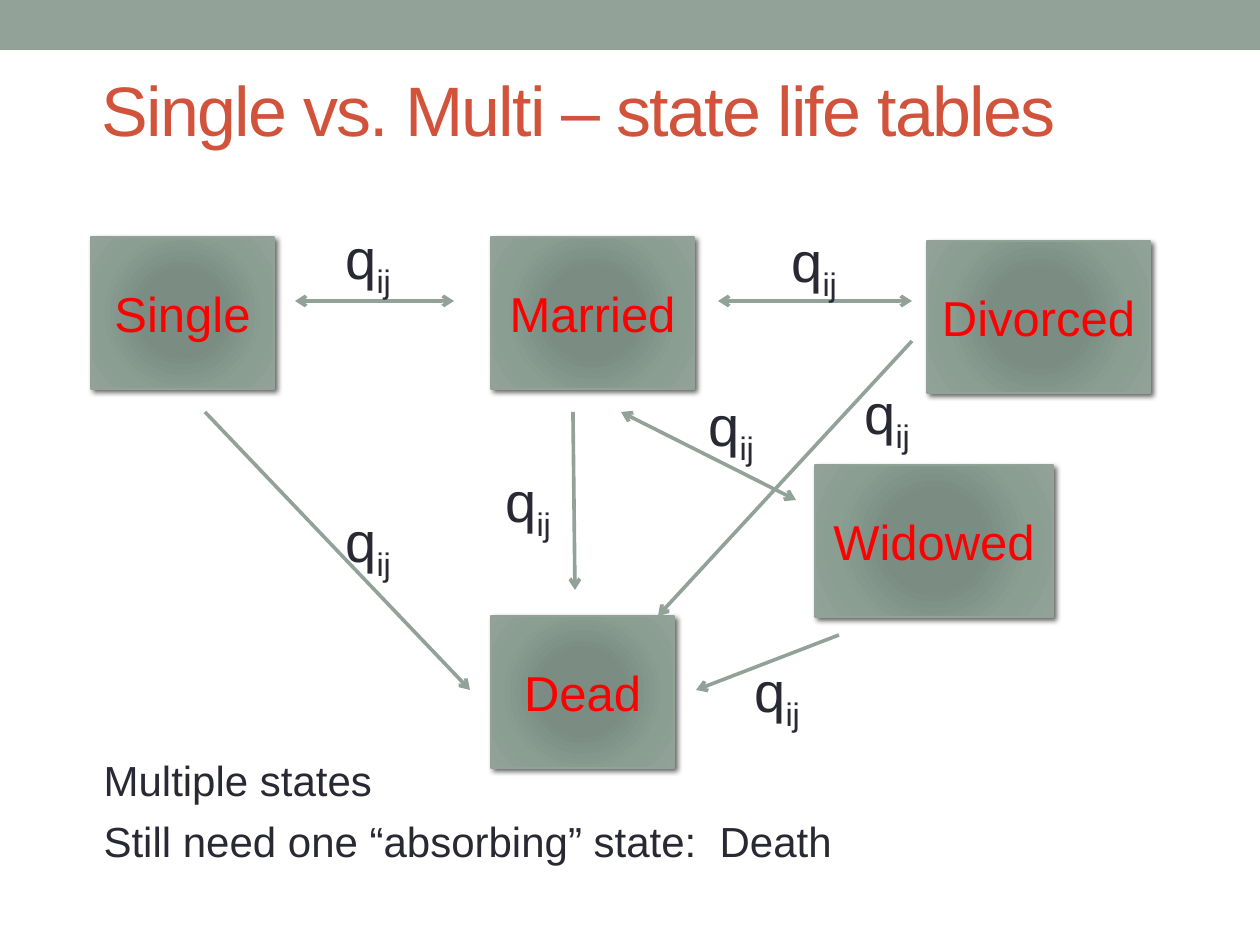
import dataclasses

import lxml.etree
import pptx
import pptx.dml.color
import pptx.enum.shapes
import pptx.enum.text
import pptx.oxml.ns
import pptx.util

PX_PER_INCH = 126
qn = pptx.oxml.ns.qn
ANCHOR = pptx.enum.text.MSO_ANCHOR
ALIGN = pptx.enum.text.PP_ALIGN
RECTANGLE = pptx.enum.shapes.MSO_SHAPE.RECTANGLE


@dataclasses.dataclass(frozen=True)
class Theme:
    font: str = "Arial"
    sage: str = "93A299"
    title: str = "D2533C"
    text: str = "292934"
    state: str = "FF0000"
    shadow: str = "000000"
    gradient: tuple = ((0, "7B8E82"), (34, "7B8D83"), (70, "8A9E92"), (100, "93A299"))
    title_size: int = 40
    rate_size: int = 32
    state_size: int = 28
    body_size: int = 24
    body_gap: int = 6
    box_line: float = 0.75
    arrow_line: float = 2.08


THEME = Theme()

# Boxes: name, left, top, width, height
STATES = [
    ("Single", 91, 237, 183, 152),
    ("Widowed", 815, 465, 238, 152),
    ("Dead", 491, 616, 183, 152),
    ("Divorced", 927, 241, 223, 152),
    ("Married", 491, 237, 203, 152),
]
# Transitions: start x, y, end x, y, goes both ways
TRANSITIONS = [
    (295, 301, 454, 301, True),
    (718, 301, 912, 301, True),
    (621, 412, 796, 500, True),
    (205, 412, 470, 690, False),
    (573, 412, 575, 590, False),
    (839, 635, 696, 690, False),
    (912, 341, 658, 616, False),
]
RATE_LABELS = [(333, 217), (493, 460), (333, 500), (696, 384),
               (779, 220), (852, 372), (742, 650)]


def px(n):
    return pptx.util.Emu(round(n * pptx.util.Inches(1) / PX_PER_INCH))


def rgb(color):
    return pptx.dml.color.RGBColor.from_string(color)


def add_xml(parent, tag, **attrs):
    return lxml.etree.SubElement(parent, qn(tag), {k: str(v) for k, v in attrs.items()})


def format_run(r, size, color):
    r.font.name = THEME.font
    r.font.size = pptx.util.Pt(size)
    r.font.color.rgb = rgb(color)


def place(s, left, top, width, height):
    s.left, s.top, s.width, s.height = map(px, (left, top, width, height))


def add_band(slide):
    s = slide.shapes.add_shape(RECTANGLE, 0, 0, px(1260), px(50))
    s.shadow.inherit = False
    s.fill.solid()
    s.fill.fore_color.rgb = rgb(THEME.sage)
    s.line.fill.background()


def set_title(slide, text):
    s = slide.shapes.title
    place(s, 89, 60, 1115, 97)
    tf = s.text_frame
    tf.text = text
    tf.vertical_anchor = ANCHOR.BOTTOM
    p = tf.paragraphs[0]
    p.alignment = ALIGN.LEFT
    r = p.runs[0]
    format_run(r, THEME.title_size, THEME.title)
    r.font._element.set("spc", "-100")


def set_body(slide, lines):
    s = slide.placeholders[1]
    place(s, 91, 748, 1147, 120)
    tf = s.text_frame
    tf.text = "\n".join(lines)
    tf.vertical_anchor = ANCHOR.TOP
    for i, p in enumerate(tf.paragraphs):
        p.space_before = pptx.util.Pt(THEME.body_gap if i else 0)
        props = p._p.get_or_add_pPr()
        props.set("marL", "0")
        props.set("indent", "0")
        add_xml(props, "a:buNone")
        format_run(p.runs[0], THEME.body_size, THEME.text)


def fill_radial(s):
    s.fill.gradient()
    grad = s._element.spPr.find(qn("a:gradFill"))
    for child in list(grad):
        grad.remove(child)
    stops = add_xml(grad, "a:gsLst")
    for position, color in THEME.gradient:
        stop = add_xml(stops, "a:gs", pos=position * 1000)
        add_xml(stop, "a:srgbClr", val=color)
    circle = add_xml(grad, "a:path", path="circle")
    add_xml(circle, "a:fillToRect", l=100000, t=100000, r=100000, b=100000)


def add_drop_shadow(s):
    s.shadow.inherit = False
    effects = s._element.spPr.find(qn("a:effectLst"))
    shadow = add_xml(effects, "a:outerShdw", blurRad=pptx.util.Pt(3),
                     dist=pptx.util.Pt(2), dir=45 * 60000, rotWithShape=0)
    color = add_xml(shadow, "a:srgbClr", val=THEME.shadow)
    add_xml(color, "a:alpha", val=60000)


def add_state(slide, name, left, top, width, height):
    s = slide.shapes.add_shape(RECTANGLE, *map(px, (left, top, width, height)))
    fill_radial(s)
    s.line.color.rgb = rgb(THEME.sage)
    s.line.width = pptx.util.Pt(THEME.box_line)
    add_drop_shadow(s)
    tf = s.text_frame
    tf.text = name
    tf.vertical_anchor = ANCHOR.MIDDLE
    p = tf.paragraphs[0]
    p.alignment = ALIGN.CENTER
    format_run(p.runs[0], THEME.state_size, THEME.state)


def add_transition(slide, x1, y1, x2, y2, both_ways):
    straight = pptx.enum.shapes.MSO_CONNECTOR.STRAIGHT
    s = slide.shapes.add_connector(straight, *map(px, (x1, y1, x2, y2)))
    s.line.color.rgb = rgb(THEME.sage)
    s.line.width = pptx.util.Pt(THEME.arrow_line)
    line = s.line._get_or_add_ln()
    if both_ways:
        add_xml(line, "a:headEnd", type="arrow")
    add_xml(line, "a:tailEnd", type="arrow")
    add_xml(s._element.spPr, "a:effectLst")


def add_rate_label(slide, left, top):
    s = slide.shapes.add_textbox(*map(px, (left, top, 73, 81)))
    tf = s.text_frame
    tf.word_wrap = False
    p = tf.paragraphs[0]
    for text in ("q", "ij"):
        r = p.add_run()
        r.text = text
        format_run(r, THEME.rate_size, THEME.text)
    r.font._element.set("baseline", "-25000")  # subscript


def main():
    prs = pptx.Presentation()
    prs.slide_width, prs.slide_height = px(1260), px(945)
    slide = prs.slides.add_slide(prs.slide_layouts[1])

    # Header and text
    add_band(slide)
    set_title(slide, "Single vs. Multi – state life tables")
    set_body(slide, ["Multiple states", "Still need one “absorbing” state:  Death"])

    # State diagram
    for state in STATES:
        add_state(slide, *state)
    for transition in TRANSITIONS:
        add_transition(slide, *transition)
    for position in RATE_LABELS:
        add_rate_label(slide, *position)

    prs.save("out.pptx")


if __name__ == "__main__":
    main()
